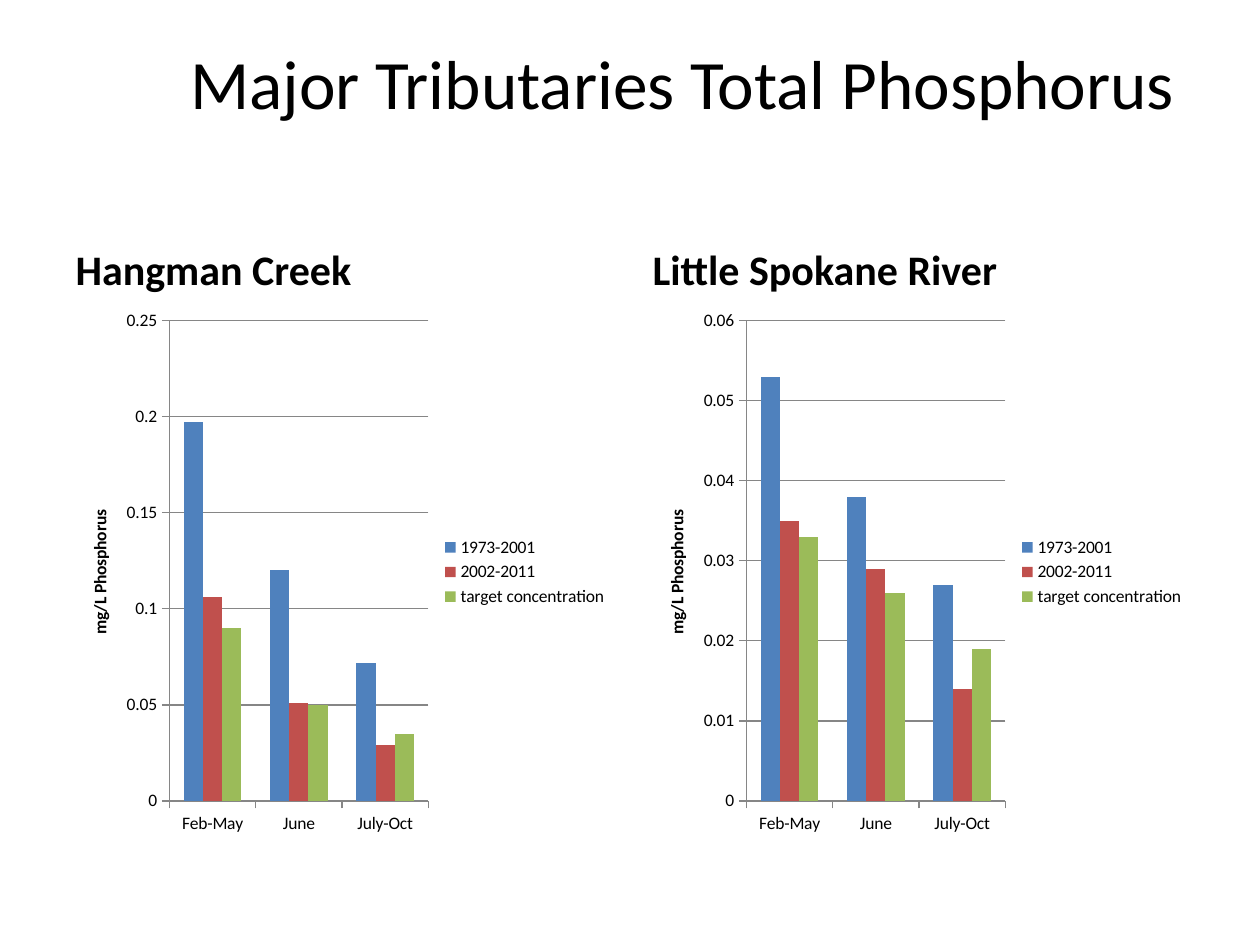
from pptx import Presentation
from pptx.chart.data import CategoryChartData
from pptx.dml.color import RGBColor
from pptx.enum.chart import XL_CHART_TYPE, XL_LEGEND_POSITION, XL_TICK_MARK
from pptx.enum.text import MSO_ANCHOR, MSO_AUTO_SIZE, PP_ALIGN
from pptx.util import Emu, Pt

EMU_PER_PX = 914400 / 126


def box(*lengths):
    return [Emu(round(length * EMU_PER_PX)) for length in lengths]


def style(font, size, bold=False):
    font.name = "Calibri"
    font.size = Pt(size)
    font.bold = bold
    font.color.rgb = RGBColor.from_string("000000")


prs = Presentation()
prs.slide_width, prs.slide_height = box(1260, 945)
slide = prs.slides.add_slide(prs.slide_layouts[4])
title, creek_heading, creek_slot, river_heading, river_slot = slide.placeholders
for slot in (creek_slot, river_slot):
    slot.element.getparent().remove(slot.element)

periods = ["1973-2001", "2002-2011", "target concentration"]
colors = ["4F81BD", "C0504D", "9BBB59"]
tributaries = [
    (creek_heading, "Hangman Creek", 63, 0.25, 0.05,
     [(0.197, 0.12, 0.072), (0.106, 0.051, 0.029), (0.09, 0.05, 0.035)]),
    (river_heading, "Little Spokane River", 640, 0.06, 0.01,
     [(0.053, 0.038, 0.027), (0.035, 0.029, 0.014), (0.033, 0.026, 0.019)]),
]

title.left, title.top, title.width, title.height = box(168, 38, 1029, 88)
title.text_frame.text = "Major Tributaries Total Phosphorus"
title.text_frame.auto_size = MSO_AUTO_SIZE.NONE
title.text_frame.vertical_anchor = MSO_ANCHOR.MIDDLE
title.text_frame.paragraphs[0].alignment = PP_ALIGN.CENTER
style(title.text_frame.paragraphs[0].font, 39.6)

for heading, name, left, maximum, step, concentrations in tributaries:
    heading.left, heading.top, heading.width, heading.height = box(left, 212, 557, 88)
    heading.text_frame.text = name
    heading.text_frame.auto_size = MSO_AUTO_SIZE.NONE
    heading.text_frame.vertical_anchor = MSO_ANCHOR.BOTTOM
    style(heading.text_frame.paragraphs[0].font, 24, True)

    phosphorus = CategoryChartData()
    phosphorus.categories = ["Feb-May", "June", "July-Oct"]
    for period, values in zip(periods, concentrations):
        phosphorus.add_series(period, values)
    chart = slide.shapes.add_chart(
        XL_CHART_TYPE.COLUMN_CLUSTERED, *box(left, 300, 557, 544), phosphorus
    ).chart
    style(chart.font, 10)
    chart.has_title = False
    chart.has_legend = True
    chart.legend.position = XL_LEGEND_POSITION.RIGHT
    chart.legend.include_in_layout = False

    columns = chart.plots[0]
    columns.gap_width = 150
    columns.overlap = 0
    columns.vary_by_categories = False
    for series, color in zip(columns.series, colors):
        series.format.fill.solid()
        series.format.fill.fore_color.rgb = RGBColor.from_string(color)

    concentration_axis = chart.value_axis
    concentration_axis.minimum_scale = 0
    concentration_axis.maximum_scale = maximum
    concentration_axis.major_unit = step
    concentration_axis.has_major_gridlines = True
    concentration_axis.tick_labels.number_format = "General"
    concentration_axis.tick_labels.number_format_is_linked = False
    unit = concentration_axis.axis_title.text_frame
    unit.text = "mg/L Phosphorus"
    style(unit.paragraphs[0].font, 10, True)
    for axis in (chart.category_axis, concentration_axis):
        axis.major_tick_mark = XL_TICK_MARK.OUTSIDE
        axis.minor_tick_mark = XL_TICK_MARK.NONE
    for rule in (chart.category_axis, concentration_axis, concentration_axis.major_gridlines):
        rule.format.line.color.rgb = RGBColor.from_string("868686")
        rule.format.line.width = Pt(0.75)

prs.save("out.pptx")
